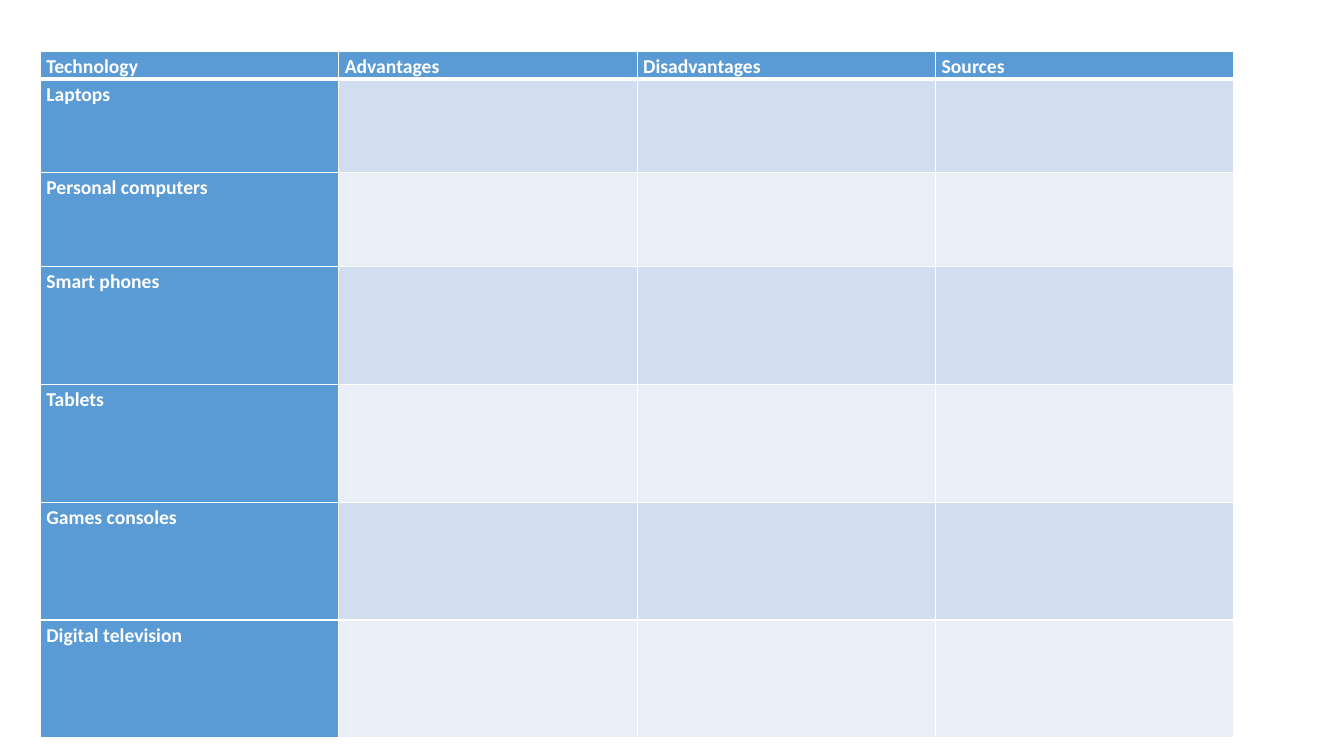
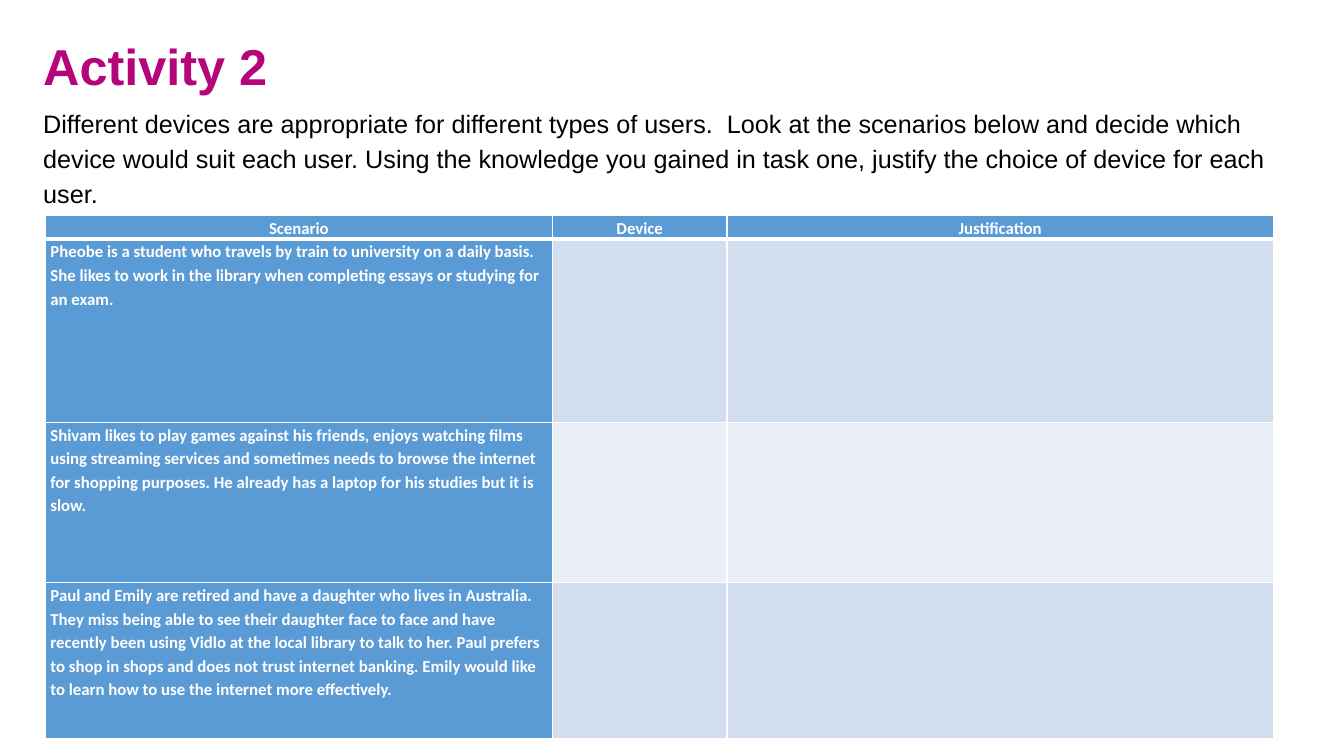
from lxml import etree
from pptx import Presentation
from pptx.dml.color import RGBColor
from pptx.enum import text
from pptx.oxml import ns
from pptx.util import Inches, Pt

BLUE, PINK, BLACK, WHITE = "5B9BD5", "B4057B", "000000", "FFFFFF"
BANDS = "D2DEEF", "EAEFF7"


def tint(code):
    return RGBColor.from_string(code)


def assign(item, values):
    for name, value in values.items():
        setattr(item, name, value)


def edge(cell, side, width):
    """Draw one white border; call before the cell is filled."""
    line = etree.SubElement(cell._tc.get_or_add_tcPr(), ns.qn("a:ln" + side),
                            w=str(Pt(width)))
    fill = etree.SubElement(line, ns.qn("a:solidFill"))
    etree.SubElement(fill, ns.qn("a:srgbClr"), val=WHITE)


class Deck:
    """Holds the shared style and the slide being filled."""

    left, center = text.PP_ALIGN.LEFT, text.PP_ALIGN.CENTER
    title = dict(name="Arial", size=Pt(36), bold=True), PINK
    body = dict(name="Arial", size=Pt(18), bold=False), BLACK

    def __init__(self):
        self.file = Presentation()
        assign(self.file, dict(slide_width=Inches(13.33),
                               slide_height=Inches(7.5)))

    def page(self):
        self.slide = self.file.slides.add_slide(self.file.slide_layouts[6])

    def label(self, para, words, style, **form):
        font, color = style
        run = para.add_run()
        run.text = words
        assign(run.font, font)
        run.font.color.rgb = tint(color)
        assign(para, form)

    def intro(self, box, head, words):
        frame = self.slide.shapes.add_textbox(*map(Inches, box)).text_frame
        frame.word_wrap = True
        self.label(frame.paragraphs[0], head, self.title,
                   line_spacing=1.5, space_before=Pt(12))
        self.label(frame.add_paragraph(), words, self.body, line_spacing=1.15,
                   space_before=Pt(6), space_after=Pt(12))

    def grid(self, spot, cols, rows, heads, names, size, pad, align):
        """Add a table with a blue top row and first column, banded elsewhere."""
        box = (*spot, sum(cols), sum(rows))
        table = self.slide.shapes.add_table(
            len(rows), len(cols), *map(Inches, box)).table
        for col, width in zip(table.columns, cols):
            col.width = Inches(width)
        for row, height in zip(table.rows, rows):
            row.height = Inches(height)
        style = dict(name="Calibri", size=Pt(size), bold=True), WHITE
        blanks = [""] * (len(cols) - 1)
        lines = [heads] + [[name, *blanks] for name in names]
        for r, line in enumerate(lines):
            for c, words in enumerate(line):
                cell = table.cell(r, c)
                thick = {0: "B", 1: "T"}.get(r)
                for side in "LRTB":
                    edge(cell, side, 3 if side == thick else 1)
                cell.fill.solid()
                cell.fill.fore_color.rgb = tint(
                    BLUE if words else BANDS[(r - 1) % 2])
                assign(cell, dict(margin_left=Inches(pad), margin_top=0,
                                  margin_right=Inches(pad), margin_bottom=0))
                if words:
                    self.label(cell.text_frame.paragraphs[0], words, style,
                               line_spacing=1.15,
                               alignment=self.left if r else align)


def main():
    deck = Deck()
    deck.page()
    deck.grid(
        (0.4, 0.51), [2.96] * 4, [0.27] + [0.93] * 2 + [1.17] * 4,
        ["Technology", "Advantages", "Disadvantages", "Sources"],
        ["Laptops", "Personal computers", "Smart phones", "Tablets",
         "Games consoles", "Digital television"],
        size=14, pad=0.06, align=deck.left)

    deck.page()
    deck.intro(
        (0.33, 0, 12.42, 2.14), "Activity 2",
        "Different devices are appropriate for different types of users.  "
        "Look at the scenarios below and decide which device would suit each "
        "user. Using the knowledge you gained in task one, justify the choice "
        "of device for each user.")
    deck.grid(
        (0.45, 2.14), [5.03, 1.73, 5.42], [0.23, 1.82, 1.59, 1.55],
        ["Scenario", "Device", "Justification"],
        ["Pheobe is a student who travels by train to university on a daily "
         "basis.  She likes to work in the library when completing essays or "
         "studying for an exam.",
         "Shivam likes to play games against his friends, enjoys watching "
         "films using streaming services and sometimes needs to browse the "
         "internet for shopping purposes. He already has a laptop for his "
         "studies but it is slow.",
         "Paul and Emily are retired and have a daughter who lives in "
         "Australia. They miss being able to see their daughter face to face "
         "and have recently been using Vidlo at the local library to talk to "
         "her. Paul prefers to shop in shops and does not trust internet "
         "banking. Emily would like to learn how to use the internet more "
         "effectively."],
        size=12, pad=0.05, align=deck.center)
    deck.file.save("out.pptx")


if __name__ == "__main__":
    main()
